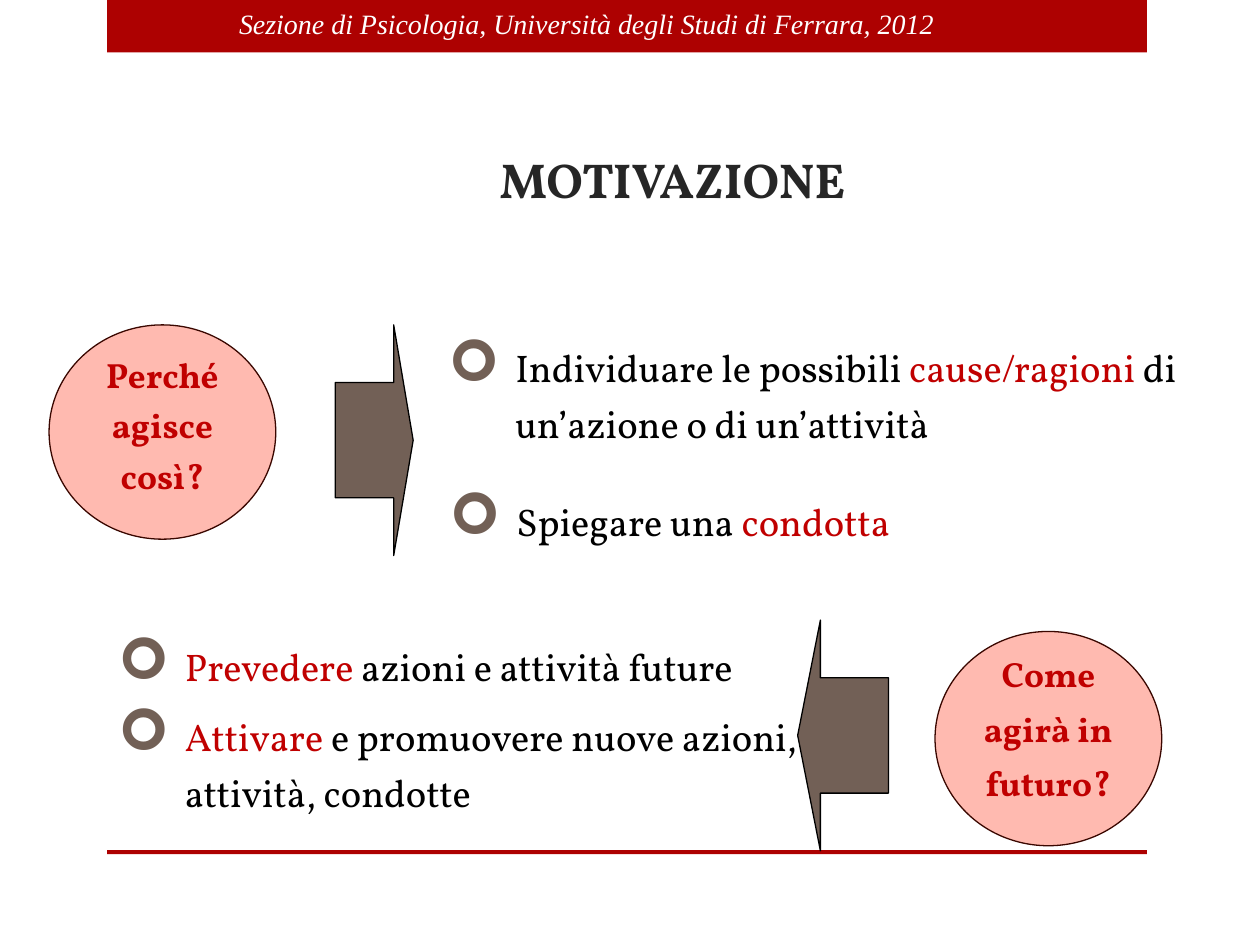
from lxml import etree
from pptx import Presentation
from pptx.dml.color import RGBColor
from pptx.enum import shapes, text
from pptx.oxml.ns import qn
from pptx.util import Cm, Pt

BAND_RED = "AD0101"
KEY_RED = "C00000"
BROWN = "726056"
BLACK = "000000"
SERIF = "Vollkorn"


def rgb(value):
    return RGBColor.from_string(value)


def add_figure(slide, preset, box, fill, outline=None):
    figure = slide.shapes.add_shape(preset, *map(Cm, box))
    figure.shadow.inherit = False
    figure.fill.solid()
    figure.fill.fore_color.rgb = rgb(fill)
    if outline:
        figure.line.color.rgb = rgb(outline)
        figure.line.width = Pt(0.75)
    else:
        figure.line.fill.background()
    return figure


def add_arrow(slide, box, rotation=0):
    arrow = add_figure(slide, shapes.MSO_SHAPE.RIGHT_ARROW, box, BROWN, BLACK)
    arrow.adjustments[0] = 0.5
    arrow.adjustments[1] = 0.25
    arrow.rotation = rotation


def add_bullet(paragraph):
    properties = paragraph._p.get_or_add_pPr()
    properties.set("marL", str(Cm(1.35)))
    properties.set("indent", str(-Cm(1.35)))
    colour = etree.SubElement(properties, qn("a:buClr"))
    etree.SubElement(colour, qn("a:srgbClr"), val=BROWN)
    etree.SubElement(properties, qn("a:buSzPct"), val="150000")
    etree.SubElement(properties, qn("a:buFont"), typeface="Wingdings")
    etree.SubElement(properties, qn("a:buChar"), char="➢")


def add_text(slide, box, parts, size, font=SERIF, bold=False, italic=False,
             align=None, spacing=None, bullet=False,
             anchor=text.MSO_ANCHOR.TOP):
    frame = slide.shapes.add_textbox(*map(Cm, box)).text_frame
    frame.word_wrap = True
    frame.vertical_anchor = anchor
    paragraph = frame.paragraphs[0]
    paragraph.alignment = align
    paragraph.line_spacing = spacing
    if bullet:
        add_bullet(paragraph)
    for wording, colour in parts:
        run = paragraph.add_run()
        run.text = wording
        run.font.name = font
        run.font.size = Pt(size)
        run.font.bold = bold
        run.font.italic = italic
        run.font.color.rgb = rgb(colour)


def add_point(slide, box, *parts):
    add_text(slide, box, parts, 22, spacing=1.2, bullet=True)


def add_question(slide, left, top, wording, label_offset, label_height, spacing):
    add_figure(slide, shapes.MSO_SHAPE.OVAL, (left, top, 4.57, 4.32),
               "FFBAB0", "3A0700")
    add_text(slide, (left + 0.38, top + label_offset, 3.81, label_height),
             [(wording, KEY_RED)], 20, bold=True,
             align=text.PP_ALIGN.CENTER, spacing=spacing)


def main():
    deck = Presentation()
    deck.slide_width, deck.slide_height = Cm(25.4), Cm(19.05)
    slide = deck.slides.add_slide(deck.slide_layouts[6])

    for top, height in ((0, 1.06), (17.14, 0.08)):
        add_figure(slide, shapes.MSO_SHAPE.RECTANGLE,
                   (2.16, top, 20.96, height), BAND_RED)
    add_text(slide, (4.57, 0, 14.88, 0.94),
             [("Sezione di Psicologia, Università degli Studi di Ferrara, 2012",
               "FFFFFF")], 16, font="Times New Roman", italic=True)
    add_text(slide, (2.11, 2.54, 22.89, 1.78), [("MOTIVAZIONE", "262626")], 28,
             bold=True, align=text.PP_ALIGN.CENTER,
             anchor=text.MSO_ANCHOR.BOTTOM)

    add_question(slide, 0.99, 6.55, "Perché agisce così?", 0.28, 3.3, 1.2)
    add_arrow(slide, (6.76, 6.55, 1.57, 4.65))
    add_point(slide, (8.79, 6.63, 17.98, 2.51),
              ("Individuare le possibili ", BLACK),
              ("cause/ragioni ", KEY_RED),
              ("di un’azione o di un’attività", BLACK))
    add_point(slide, (8.81, 9.73, 16.5, 1.32),
              ("Spiegare una ", BLACK), ("condotta", KEY_RED))

    add_point(slide, (2.13, 12.65, 19.2, 1.32),
              ("Prevedere", KEY_RED), (" azioni e attività future", BLACK))
    add_point(slide, (2.13, 14.07, 14.38, 2.51),
              ("Attivare", KEY_RED),
              (" e promuovere nuove azioni, attività, condotte", BLACK))
    add_arrow(slide, (16.08, 12.5, 1.83, 4.65), rotation=180)
    add_question(slide, 18.85, 12.73, "Come agirà in futuro?", 0.05, 3.56, 1.3)

    deck.save("out.pptx")


if __name__ == "__main__":
    main()
